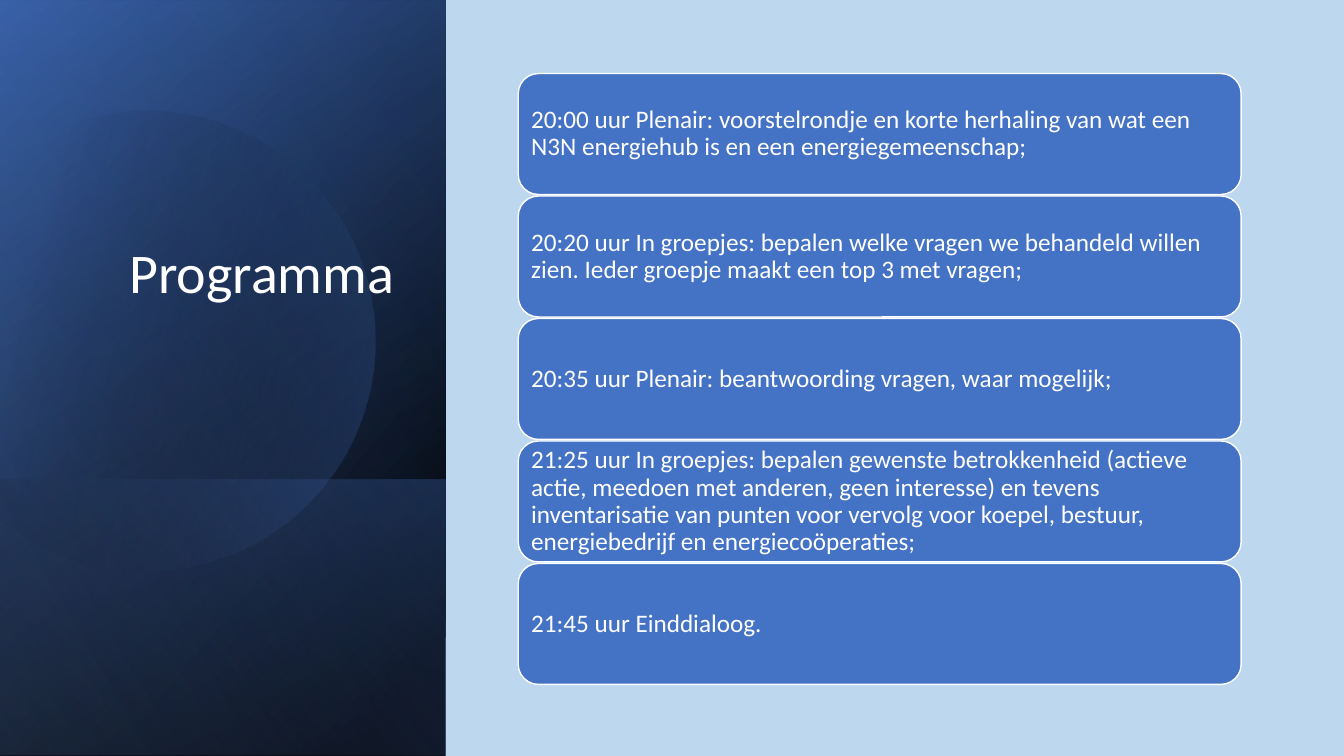
from math import cos, radians, sin
from pptx import Presentation
from pptx.dml.color import RGBColor
from pptx.enum.shapes import MSO_SHAPE
from pptx.enum.text import MSO_ANCHOR, PP_ALIGN
from pptx.oxml import parse_xml
from pptx.oxml.ns import nsdecls
from pptx.util import Inches, Pt

PALE = RGBColor(0xBD, 0xD7, 0xEE)
BLUE = RGBColor(0x44, 0x72, 0xC4)
NAVY = RGBColor(0x2F, 0x55, 0x97)
LIGHT = RGBColor(0x8F, 0xAA, 0xDC)
BLACK = RGBColor(0, 0, 0)
WHITE = RGBColor(255, 255, 255)


def set_gradient(shape, stops, angle):
    shape.shadow.inherit = False
    shape.line.fill.background()
    shape.fill.background()
    gs = "".join(
        f'<a:gs pos="{pos * 1000}"><a:srgbClr val="{color}">'
        f'<a:alpha val="{alpha * 1000}"/></a:srgbClr></a:gs>'
        for pos, color, alpha in stops)
    grad = parse_xml(
        f'<a:gradFill {nsdecls("a")} rotWithShape="1"><a:gsLst>{gs}</a:gsLst>'
        f'<a:lin ang="{angle * 60000}" scaled="0"/></a:gradFill>')
    spPr = shape.element.spPr
    spPr.replace(spPr.find("{*}noFill"), grad)


def add_panel(left, top, width, stops, angle):
    sp = s.shapes.add_shape(MSO_SHAPE.RECTANGLE, Inches(left), Inches(top),
                            Inches(width), Inches(4.42))
    sp.rotation = 90
    sp.element.spPr.find("{*}xfrm").set("flipH", "1")
    set_gradient(sp, stops, angle)


prs = Presentation()
prs.slide_width, prs.slide_height = Inches(13.33), Inches(7.5)
s = prs.slides.add_slide(prs.slide_layouts[5])
s.background.fill.solid()
s.background.fill.fore_color.rgb = PALE

add_panel(-1.54, 1.54, 7.5, [(8, BLACK, 100), (100, NAVY, 100)], 50)
add_panel(-1.54, 1.55, 7.5, [(0, BLACK, 0), (99, BLUE, 46)], 30)
add_panel(0.84, 3.92, 2.74, [(2, BLUE, 29), (100, BLACK, 30)], 130)

curves = [
    [(1.49, 1.1), (2.46, 1.12), (3.35, 1.77), (3.63, 2.75)],
    [(3.63, 2.75), (3.98, 3.97), (3.28, 5.23), (2.07, 5.58)],
    [(2.07, 5.58), (1.31, 5.8), (0.53, 5.61), (-0.03, 5.14)],
    [(-0.15, 5.03), (-0.15, 3.94), (-0.15, 2.84), (-0.15, 1.75)],
    [(0, 1.61), (0.23, 1.42), (0.5, 1.28), (0.8, 1.19)],
    [(0.8, 1.19), (1.03, 1.13), (1.26, 1.1), (1.49, 1.1)],
]
turn = 343.9
cx, cy = 1.59, 3.35
ca, sa = cos(radians(-turn)), sin(radians(-turn))
outline = []
for curve in curves:
    for i in range(17):
        t = i / 16
        weights = ((1 - t) ** 3, 3 * t * (1 - t) ** 2, 3 * t * t * (1 - t), t ** 3)
        dx = sum(w * x for w, (x, y) in zip(weights, curve)) - cx
        dy = sum(w * y for w, (x, y) in zip(weights, curve)) - cy
        outline.append((Inches(cx + dx * ca - dy * sa), Inches(cy + dx * sa + dy * ca)))
fb = s.shapes.build_freeform(*outline[0])
fb.add_line_segments(outline[1:], close=True)
disc = fb.convert_to_shape()
disc.rotation = turn
set_gradient(disc, [(29, BLACK, 0), (100, BLUE, 43)], 30)

add_panel(-1.54, 1.53, 7.5, [(0, BLACK, 0), (99, LIGHT, 11)], 120)

title = s.shapes.title
title.element.getparent().append(title.element)
title.left, title.top = Inches(0.51), Inches(0.64)
title.width, title.height = Inches(3.5), Inches(3.7)
tf = title.text_frame
tf.text = "Programma"
tf.word_wrap = True
tf.vertical_anchor = MSO_ANCHOR.BOTTOM
tf.margin_bottom = Inches(1.31)
p = tf.paragraphs[0]
p.alignment = PP_ALIGN.RIGHT
p.line_spacing = 0.9
p.font.name, p.font.size = "Calibri", Pt(40)
p.font.color.rgb = WHITE

agenda = [
    "20:00 uur Plenair: voorstelrondje en korte herhaling van wat een N3N energiehub is en een energiegemeenschap;",
    "20:20 uur In groepjes: bepalen welke vragen we behandeld willen zien. Ieder groepje maakt een top 3 met vragen;",
    "20:35 uur Plenair: beantwoording vragen, waar mogelijk;",
    "21:25 uur In groepjes: bepalen gewenste betrokkenheid (actieve actie, meedoen met anderen, geen interesse) "
    "en tevens inventarisatie van punten voor vervolg voor koepel, bestuur, energiebedrijf en energiecoöperaties;",
    "21:45 uur Einddialoog.",
]
for i, text in enumerate(agenda):
    sp = s.shapes.add_shape(MSO_SHAPE.ROUNDED_RECTANGLE, Inches(5.14),
                            Inches(0.73 + i * 1.215), Inches(7.17), Inches(1.2))
    sp.shadow.inherit = False
    sp.fill.solid()
    sp.fill.fore_color.rgb = BLUE
    sp.line.color.rgb = WHITE
    sp.line.width = Pt(1)
    tf = sp.text_frame
    tf.text = text
    tf.word_wrap = True
    tf.vertical_anchor = MSO_ANCHOR.MIDDLE
    tf.margin_left = tf.margin_right = tf.margin_top = tf.margin_bottom = Inches(0.07)
    p = tf.paragraphs[0]
    p.alignment = PP_ALIGN.LEFT
    p.line_spacing = 0.9
    p.font.name, p.font.size = "Calibri", Pt(18)
    p.font.color.rgb = WHITE

prs.save("out.pptx")
